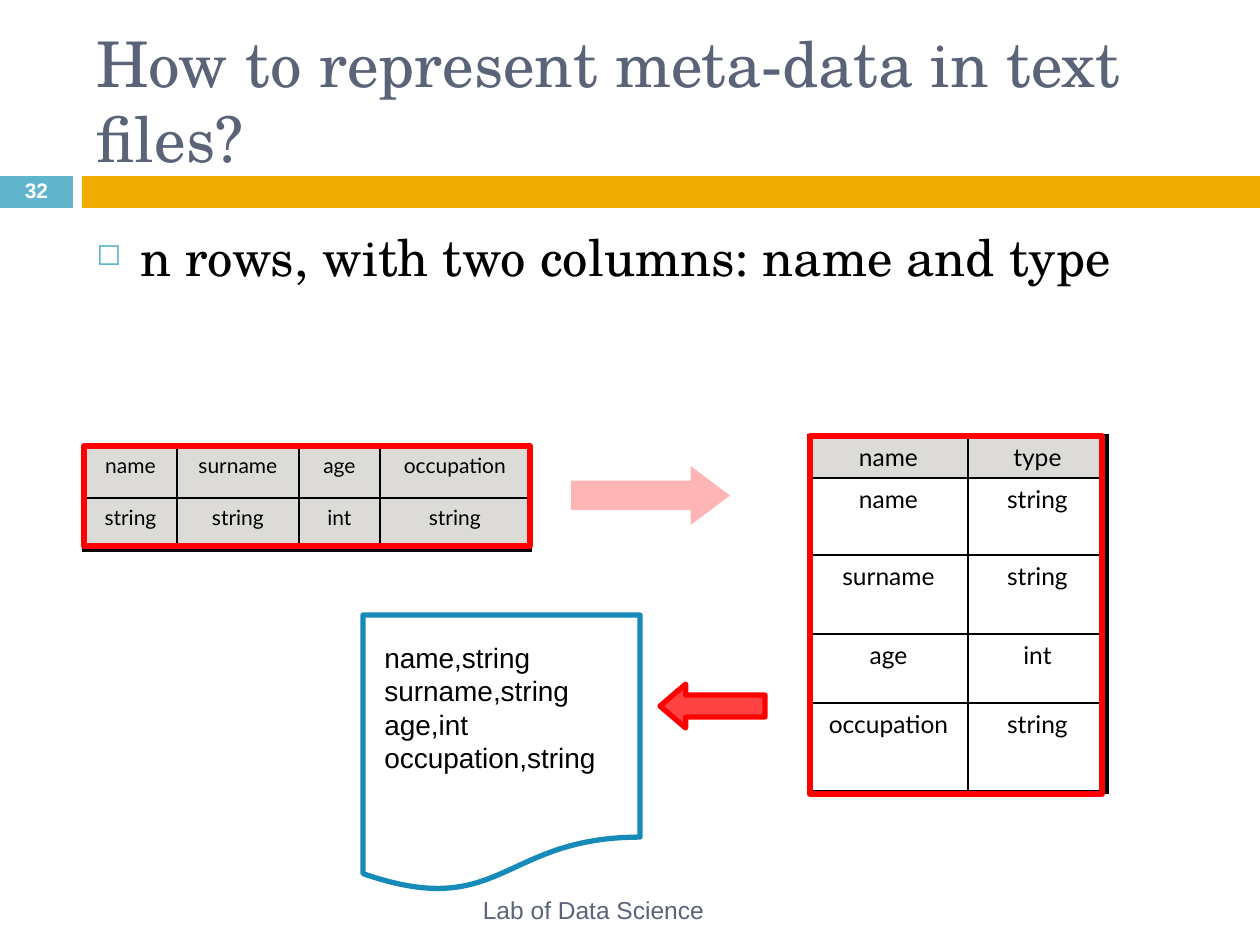
from dataclasses import dataclass

from lxml import etree
from pptx import Presentation
from pptx.dml.color import RGBColor
from pptx.enum.shapes import MSO_SHAPE
from pptx.enum.text import MSO_ANCHOR, PP_ALIGN
from pptx.oxml.ns import qn
from pptx.util import Emu, Pt

RECTANGLE = MSO_SHAPE.RECTANGLE
DOCUMENT = MSO_SHAPE.FLOWCHART_DOCUMENT
RIGHT_ARROW = MSO_SHAPE.RIGHT_ARROW
TOP, MIDDLE = MSO_ANCHOR.TOP, MSO_ANCHOR.MIDDLE
LEFT, CENTER = PP_ALIGN.LEFT, PP_ALIGN.CENTER
EMU_PER_PX = 914400 / 126


@dataclass(frozen=True)
class Theme:
    heading_font: str = "TeX Gyre Schola"
    body_font: str = "Arial"
    table_font: str = "Lato"
    slate: str = "5A6378"
    aqua: str = "60B5CC"
    amber: str = "F0AD00"
    red: str = "FF0000"
    blue: str = "168BBA"
    grey: str = "BBB9B3"
    black: str = "000000"
    white: str = "FFFFFF"
    title_size: int = 36
    bullet_size: int = 29
    file_size: int = 16
    wide_table_size: int = 12
    tall_table_size: int = 14
    footer_size: int = 14
    number_size: int = 12
    outline: int = 3
    outer_border: float = 2.25
    inner_border: int = 1


THEME = Theme()


def px(length):
    return Emu(round(length * EMU_PER_PX))


def apply_format(target, values):
    for name, value in values.items():
        setattr(target, name, value)


def set_fill(fill, color, opacity=100):
    fill.solid()
    fill.fore_color.rgb = RGBColor.from_string(color)
    if opacity < 100:
        color_element = fill._xPr.find(qn("a:solidFill"))[0]
        etree.SubElement(color_element, qn("a:alpha"), val=str(opacity * 1000))


def write_paragraph(paragraph, text, font, size, color, bold=False, **layout):
    apply_format(paragraph, layout)
    run = paragraph.add_run()
    run.text = text
    apply_format(run.font, {"name": font, "size": Pt(size), "bold": bold})
    run.font.color.rgb = RGBColor.from_string(color)


def add_text(slide, box, lines, font, size, color, anchor=TOP, **options):
    text_box = slide.shapes.add_textbox(*map(px, box))
    frame = text_box.text_frame
    apply_format(frame, {"word_wrap": True, "vertical_anchor": anchor})
    for index, line in enumerate(lines):
        paragraph = frame.add_paragraph() if index else frame.paragraphs[0]
        write_paragraph(paragraph, line, font, size, color, **options)
    return text_box


def add_bullet(paragraph, character, color, indent):
    properties = paragraph._p.get_or_add_pPr()
    properties.set("marL", str(px(indent)))
    properties.set("indent", str(-px(indent)))
    bullet_color = etree.SubElement(properties, qn("a:buClr"))
    etree.SubElement(bullet_color, qn("a:srgbClr"), val=color)
    etree.SubElement(properties, qn("a:buSzPct"), val="60000")
    etree.SubElement(properties, qn("a:buChar"), char=character)


def add_shape(slide, kind, box, fill=None, opacity=100, line=None, rotation=0, adjustments=()):
    shape = slide.shapes.add_shape(kind, *map(px, box))
    shape.shadow.inherit = False
    shape.rotation = rotation
    for index, value in enumerate(adjustments):
        shape.adjustments[index] = value
    if fill:
        set_fill(shape.fill, fill, opacity)
    else:
        shape.fill.background()
    if line:
        shape.line.color.rgb = RGBColor.from_string(line)
        shape.line.width = Pt(THEME.outline)
    else:
        shape.line.fill.background()


def set_borders(cell, outer_sides):
    """Draw all four borders, heavier on the sides at the table's edge."""
    properties = cell._tc.get_or_add_tcPr()
    for position, side in enumerate("LRTB"):
        width = THEME.outer_border if side in outer_sides else THEME.inner_border
        border = etree.Element(qn(f"a:ln{side}"), w=str(Pt(width)))
        fill = etree.SubElement(border, qn("a:solidFill"))
        etree.SubElement(fill, qn("a:srgbClr"), val=THEME.black)
        properties.insert(position, border)


def add_table(slide, left, top, widths, heights, rows, size, shaded_rows):
    box = (left, top, sum(widths), sum(heights))
    table = slide.shapes.add_table(len(rows), len(widths), *map(px, box)).table
    apply_format(table, {"first_row": False, "horz_banding": False})
    for column, width in zip(table.columns, widths):
        column.width = px(width)
    for row, height in zip(table.rows, heights):
        row.height = px(height)
    for i, values in enumerate(rows):
        for j, value in enumerate(values):
            cell = table.cell(i, j)
            write_paragraph(cell.text_frame.paragraphs[0], value, THEME.table_font,
                            size, THEME.black, alignment=CENTER)
            if i < shaded_rows:
                set_fill(cell.fill, THEME.grey, 50)
            else:
                cell.fill.background()
            at_edge = {"L": j == 0, "R": j == len(widths) - 1,
                       "T": i == 0, "B": i == len(rows) - 1}
            set_borders(cell, [side for side, outer in at_edge.items() if outer])


def add_header(slide):
    add_shape(slide, RECTANGLE, (0, 176, 73, 32), THEME.aqua)
    add_shape(slide, RECTANGLE, (82, 176, 1178, 32), THEME.amber)
    add_text(slide, (84, 32, 1124, 136), ["How to represent meta-data in text files?"],
             THEME.heading_font, THEME.title_size, THEME.slate, MIDDLE)
    add_text(slide, (0, 175, 73, 34), ["32"], THEME.body_font, THEME.number_size,
             THEME.white, MIDDLE, bold=True, alignment=CENTER, line_spacing=0.8)


def main():
    presentation = Presentation()
    apply_format(presentation, {"slide_width": px(1260), "slide_height": px(945)})
    slide = presentation.slides.add_slide(presentation.slide_layouts[6])

    add_header(slide)
    body = add_text(slide, (84, 220, 1124, 620), ["n rows, with two columns: name and type"],
                    THEME.heading_font, THEME.bullet_size, THEME.black)
    add_bullet(body.text_frame.paragraphs[0], "◻", THEME.aqua, 44)
    add_text(slide, (220, 885, 747, 50), ["Lab of Data Science"], THEME.body_font,
             THEME.footer_size, THEME.slate, MIDDLE, alignment=CENTER)

    fields = [("name", "string"), ("surname", "string"), ("age", "int"), ("occupation", "string")]
    add_table(slide, 84, 446, (93, 122, 81, 150), (52, 52), list(zip(*fields)),
              THEME.wide_table_size, shaded_rows=2)
    add_shape(slide, RECTANGLE, (84, 446, 446, 100), line=THEME.red)

    add_shape(slide, DOCUMENT, (363, 615, 277, 277), line=THEME.blue)
    add_shape(slide, RIGHT_ARROW, (660, 684, 105, 44), THEME.red, 74, THEME.red,
              rotation=180, adjustments=(0.5, 0.583))

    add_table(slide, 809, 436, (159, 139), (42, 77, 79, 69, 89), [("name", "type")] + fields,
              THEME.tall_table_size, shaded_rows=1)
    add_text(slide, (372, 634, 258, 149), [",".join(field) for field in fields],
             THEME.body_font, THEME.file_size, THEME.black, alignment=LEFT)
    add_shape(slide, RECTANGLE, (810, 436, 292, 358), line=THEME.red)
    add_shape(slide, RIGHT_ARROW, (571, 466, 159, 59), THEME.red, 29, adjustments=(0.5, 0.667))

    presentation.save("out.pptx")


if __name__ == "__main__":
    main()
